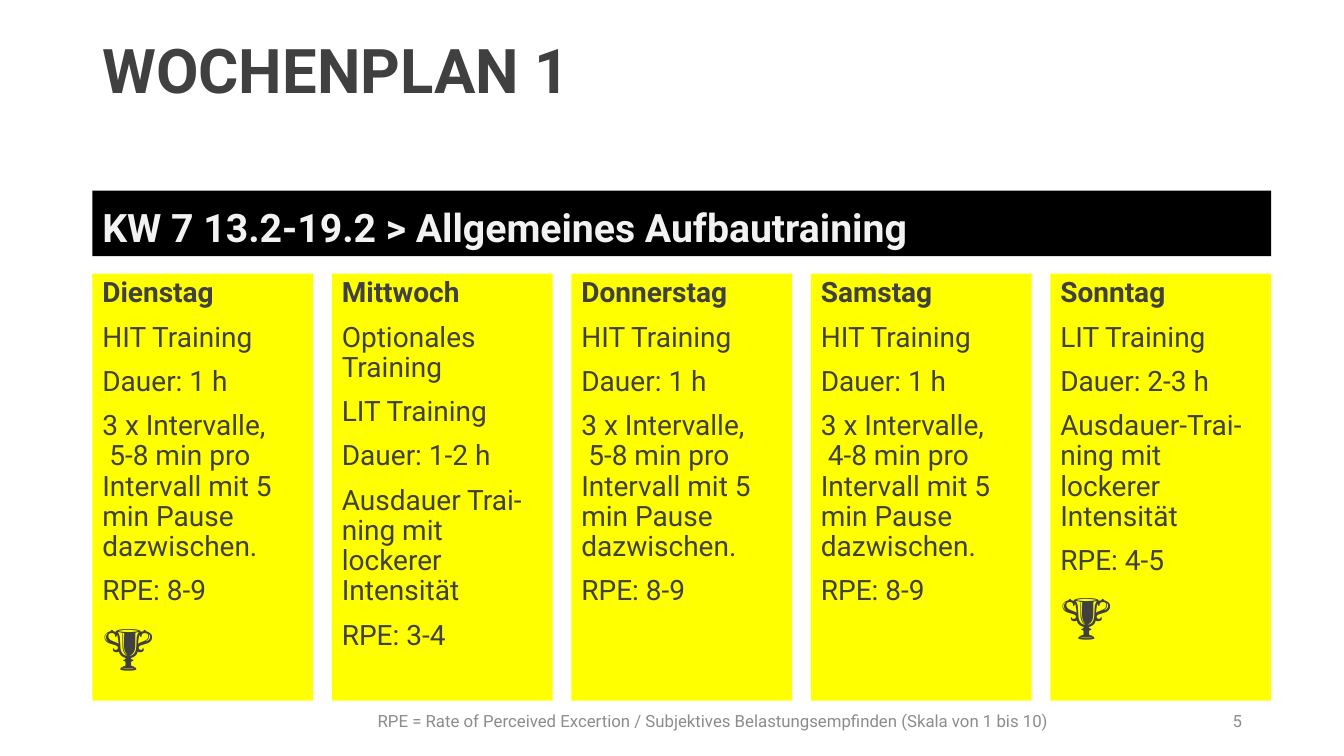
from pptx import Presentation
from pptx import util as u
from pptx.dml import color
from pptx.enum import shapes, text

DARK, GREY = "404040", "8C8C8C"
TROPHY = "🏆"
INTERVALS = "3 x Intervalle,\v {} min pro Intervall mit 5 min Pause dazwischen."
DAYS = [
    ["Dienstag", "HIT Training", "Dauer: 1 h", INTERVALS.format("5-8"), "RPE: 8-9", TROPHY],
    ["Mittwoch", "Optionales Training", "LIT Training", "Dauer: 1-2 h",
     "Ausdauer Trai-ning mit lockerer Intensität", "RPE: 3-4"],
    ["Donnerstag", "HIT Training", "Dauer: 1 h", INTERVALS.format("5-8"), "RPE: 8-9"],
    ["Samstag", "HIT Training", "Dauer: 1 h", INTERVALS.format("4-8"), "RPE: 8-9"],
    ["Sonntag", "LIT Training", "Dauer: 2-3 h",
     "Ausdauer-Trai-ning mit lockerer Intensität", "RPE: 4-5", TROPHY],
]


def rgb(value):
    return color.RGBColor.from_string(value)


def add_frame(page, box, fill=None, anchor=text.MSO_ANCHOR.MIDDLE):
    place = [u.Pt(length) for length in box]
    if fill:
        shape = page.shapes.add_shape(shapes.MSO_SHAPE.RECTANGLE, *place)
        shape.shadow.inherit = False
        shape.fill.solid()
        shape.fill.fore_color.rgb = rgb(fill)
        shape.line.fill.background()
    else:
        shape = page.shapes.add_textbox(*place)
    frame = shape.text_frame
    frame.word_wrap = True
    frame.vertical_anchor = anchor
    return frame


def write(para, words, size=20, ink=DARK, bold=False, align=text.PP_ALIGN.LEFT,
          spacing=0.9, before=0):
    para.text = words
    para.alignment = align
    para.line_spacing = spacing
    para.space_before = u.Pt(before)
    for span in para.runs:
        span.font.name = "Roboto"
        span.font.size = u.Pt(size)
        span.font.bold = bold
        span.font.color.rgb = rgb(ink)


def draw_heading(page, box):
    left, top, width, height = box
    title = add_frame(page, (left, top, 721.5, 91.5))
    write(title.paragraphs[0], "WOCHENPLAN 1", size=44, bold=True)
    week = add_frame(page, (left, top + height - 46.8, width, 46.8), "000000",
                     text.MSO_ANCHOR.BOTTOM)
    write(week.paragraphs[0], "KW 7 13.2-19.2 > Allgemeines Aufbautraining",
          size=28, ink="F2F2F2", bold=True)


def draw_day(page, box, lines):
    frame = add_frame(page, box, "FFFF00", text.MSO_ANCHOR.TOP)
    for index, line in enumerate(lines):
        para = frame.add_paragraph() if index else frame.paragraphs[0]
        write(para, line, size=40 if line == TROPHY else 20,
              bold=index == 0, before=10 if index else 0)


def draw_week(page, box):
    left, top, width, height = box
    day_width = 157.7
    pitch = (width - day_width) / (len(DAYS) - 1)
    for index, lines in enumerate(DAYS):
        draw_day(page, (left + index * pitch, top, day_width, height), lines)


def draw_footer(page, box):
    left, top, width, height = box
    note = add_frame(page, box)
    write(note.paragraphs[0],
          "RPE = Rate of Perceived Excertion / Subjektives Belastungsempfinden (Skala von 1 bis 10)",
          size=12, ink=GREY, align=text.PP_ALIGN.CENTER, spacing=1)
    number = add_frame(page, (left + width - 216, top, 216, height))
    write(number.paragraphs[0], "5", size=12, ink=GREY,
          align=text.PP_ALIGN.RIGHT, spacing=1)


def main():
    deck = Presentation()
    deck.slide_width, deck.slide_height = u.Pt(960), u.Pt(540)
    page = deck.slides.add_slide(deck.slide_layouts[6])
    draw_heading(page, (66, 6.5, 842, 176.4))
    draw_footer(page, (124.6, 500.4, 769.7, 29))
    draw_week(page, (66, 195.5, 842, 305))
    deck.save("out.pptx")


if __name__ == "__main__":
    main()
